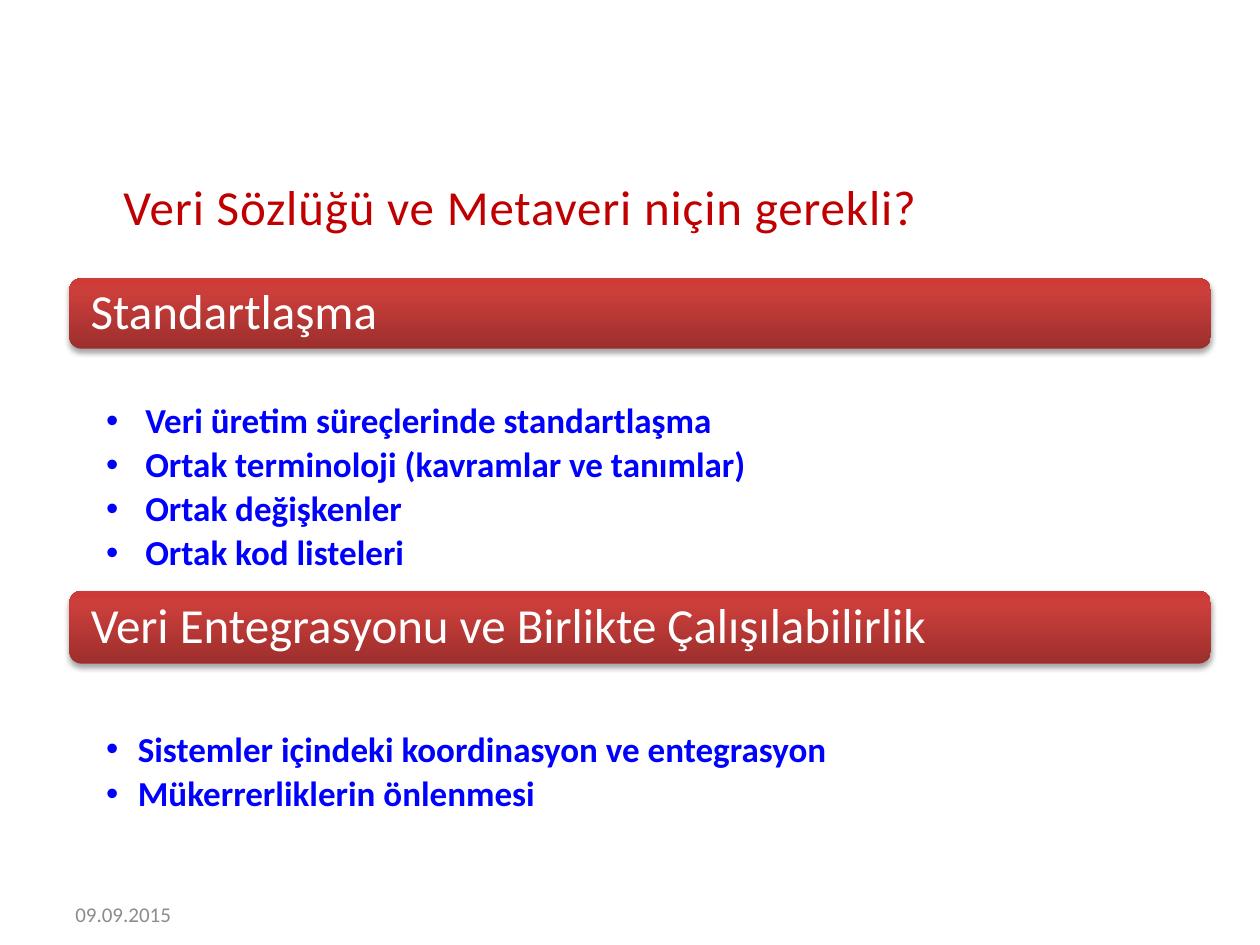
from copy import deepcopy
from dataclasses import dataclass

from lxml import etree
from pptx import Presentation
from pptx.dml.color import RGBColor
from pptx.enum.shapes import MSO_SHAPE
from pptx.enum.text import MSO_ANCHOR, PP_ALIGN
from pptx.oxml.ns import qn
from pptx.util import Cm, Pt

ROUNDED = MSO_SHAPE.ROUNDED_RECTANGLE
TOP, MIDDLE = MSO_ANCHOR.TOP, MSO_ANCHOR.MIDDLE
LEFT = PP_ALIGN.LEFT

BAND_LEFT, BAND_WIDTH = 1.4, 23.01


@dataclass(frozen=True)
class Theme:
    font: str = "Calibri"
    title: str = "C00000"
    heading: str = "FFFFFF"
    bullet: str = "0000FF"
    date: str = "8C8C8C"
    band_stops: tuple = ((0, "9C2F2D"), (0.8, "CB3E3A"), (1, "CE3B37"))
    large: int = 28
    medium: int = 20
    small: int = 12


def write_text(paragraph, text, *, font, size, color, bold=False,
               tracking=0, line_spacing=None, space_after=0):
    paragraph.alignment = LEFT
    paragraph.space_after = Pt(space_after)
    if line_spacing:
        paragraph.line_spacing = line_spacing
    run = paragraph.add_run()
    run.text = text
    run.font.name = font
    run.font.size = Pt(size)
    run.font.bold = bold
    run.font.color.rgb = RGBColor.from_string(color)
    if tracking:
        run.font._element.set("spc", str(int(tracking * 100)))


def add_bullet(paragraph, hanging):
    properties = paragraph._p.get_or_add_pPr()
    properties.set("marL", str(Cm(hanging)))
    properties.set("indent", str(-Cm(hanging)))
    etree.SubElement(properties, qn("a:buFont")).set("typeface", "Arial")
    etree.SubElement(properties, qn("a:buChar")).set("char", "•")


def add_soft_shadow(shape):
    shape.shadow.inherit = False
    effects = shape._element.spPr.find(qn("a:effectLst"))
    shadow = etree.SubElement(effects, qn("a:outerShdw"), blurRad=str(Pt(3.1)),
                              dist=str(Pt(1.8)), dir="5400000", rotWithShape="0")
    color = etree.SubElement(shadow, qn("a:srgbClr"), val="000000")
    etree.SubElement(color, qn("a:alpha"), val="35000")


def fill_gradient(shape, stops):
    """Fill from bottom to top with (position, colour) stops."""
    shape.fill.gradient()
    shape.fill.gradient_angle = 90
    stop_list = shape._element.spPr.find(".//" + qn("a:gsLst"))
    while len(stop_list) < len(stops):
        stop_list.append(deepcopy(stop_list[0]))
    for stop, (position, color) in zip(shape.fill.gradient_stops, stops):
        stop.position = position
        stop.color.rgb = RGBColor.from_string(color)


class SlideBuilder:
    def __init__(self, slide, theme):
        self.slide = slide
        self.theme = theme

    def frame(self, shape, anchor, insets):
        text_frame = shape.text_frame
        text_frame.word_wrap = True
        text_frame.vertical_anchor = anchor
        (text_frame.margin_left, text_frame.margin_top,
         text_frame.margin_right, text_frame.margin_bottom) = map(Cm, insets)
        return text_frame

    def text_box(self, box, anchor=TOP, insets=(0.25, 0.13, 0.25, 0.13)):
        shape = self.slide.shapes.add_textbox(*map(Cm, box))
        return self.frame(shape, anchor, insets)

    def label(self, text, box, anchor=TOP, **style):
        text_frame = self.text_box(box, anchor)
        write_text(text_frame.paragraphs[0], text, font=self.theme.font, **style)

    def band(self, text, top, height):
        box = (BAND_LEFT, top, BAND_WIDTH, height)
        shape = self.slide.shapes.add_shape(ROUNDED, *map(Cm, box))
        fill_gradient(shape, self.theme.band_stops)
        shape.line.fill.background()
        add_soft_shadow(shape)
        text_frame = self.frame(shape, MIDDLE, (0.36, 0, 0.3, 0))
        write_text(text_frame.paragraphs[0], text, font=self.theme.font,
                   size=self.theme.large, color=self.theme.heading, line_spacing=0.9)

    def bullets(self, items, top, height, hanging):
        text_frame = self.text_box((BAND_LEFT, top, BAND_WIDTH, height),
                                   insets=(0.74, 0.08, 0.4, 0.08))
        for index, item in enumerate(items):
            paragraph = text_frame.add_paragraph() if index else text_frame.paragraphs[0]
            add_bullet(paragraph, hanging)
            write_text(paragraph, item, font=self.theme.font, size=self.theme.medium,
                       color=self.theme.bullet, bold=True,
                       line_spacing=0.9, space_after=3.6)


def main():
    presentation = Presentation()
    presentation.slide_width, presentation.slide_height = Cm(25.4), Cm(19.05)
    slide = presentation.slides.add_slide(presentation.slide_layouts[6])
    theme = Theme()
    builder = SlideBuilder(slide, theme)

    builder.label("09.09.2015", (1.27, 17.91, 5.92, 1.02), MIDDLE,
                  size=theme.small, color=theme.date)
    builder.label("Veri Sözlüğü ve Metaveri niçin gerekli?", (2.24, 3.43, 22.86, 1.8),
                  size=theme.large, color=theme.title, tracking=0.5)

    builder.band("Standartlaşma", top=5.61, height=1.42)
    builder.bullets(["Veri üretim süreçlerinde standartlaşma",
                     "Ortak terminoloji (kavramlar ve tanımlar)",
                     "Ortak değişkenler",
                     "Ortak kod listeleri"], top=8.05, height=3.73, hanging=0.79)

    builder.band("Veri Entegrasyonu ve Birlikte Çalışılabilirlik", top=11.91, height=1.47)
    builder.bullets(["Sistemler içindeki koordinasyon ve entegrasyon",
                     "Mükerrerliklerin önlenmesi"], top=14.68, height=2.5, hanging=0.64)

    presentation.save("out.pptx")


if __name__ == "__main__":
    main()
